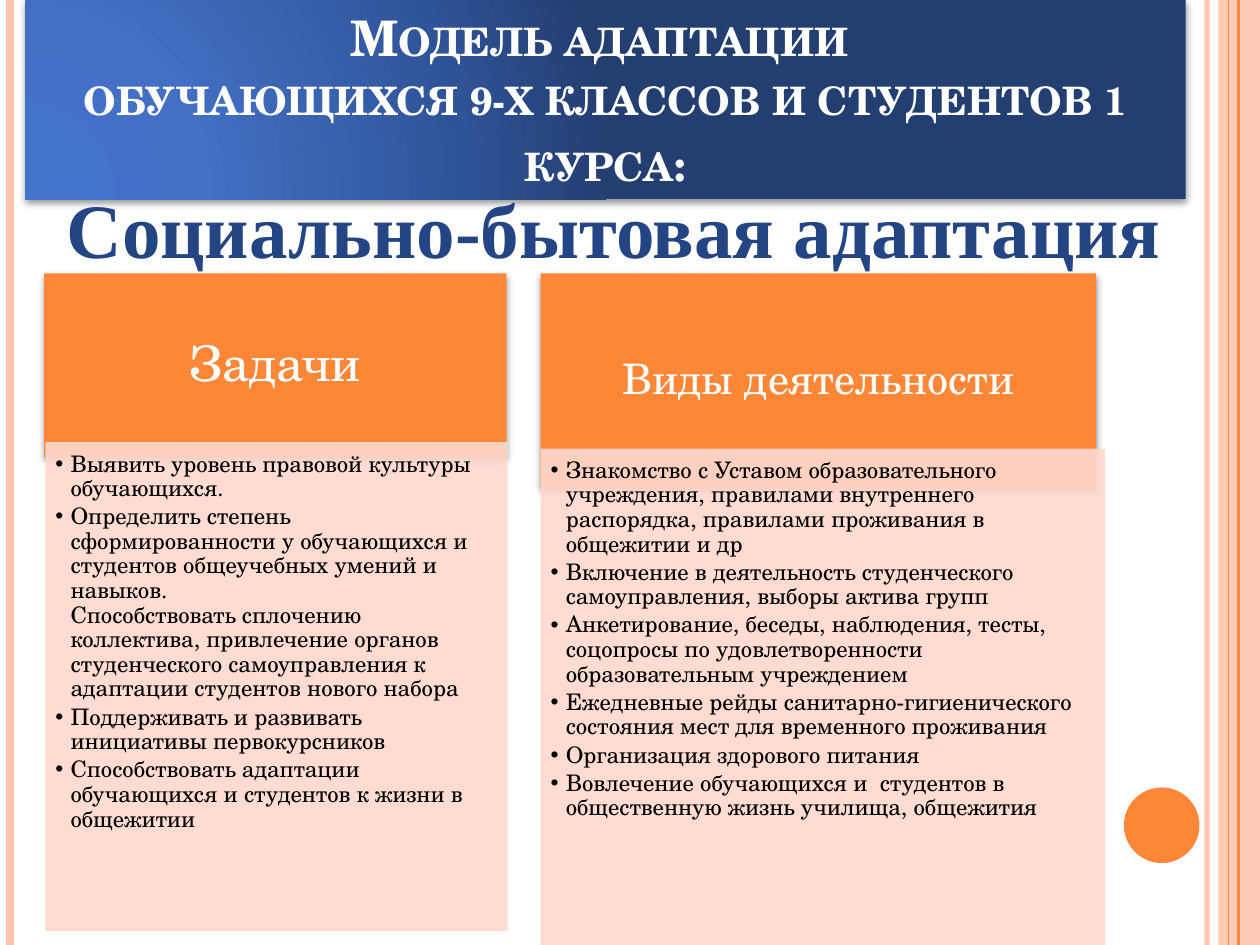
"""Builds the slide on the social adaptation of students."""
from copy import deepcopy

from lxml import etree
from pptx import Presentation
from pptx.dml.color import RGBColor
from pptx.enum.shapes import MSO_CONNECTOR, MSO_SHAPE
from pptx.enum.text import MSO_ANCHOR, MSO_AUTO_SIZE, PP_ALIGN
from pptx.oxml import parse_xml
from pptx.oxml.ns import nsdecls, qn
from pptx.util import Inches, Pt

STRAIGHT = MSO_CONNECTOR.STRAIGHT
RECTANGLE, OVAL = MSO_SHAPE.RECTANGLE, MSO_SHAPE.OVAL
TOP, MIDDLE, BOTTOM = MSO_ANCHOR.TOP, MSO_ANCHOR.MIDDLE, MSO_ANCHOR.BOTTOM
CENTER, LEFT = PP_ALIGN.CENTER, PP_ALIGN.LEFT
NO_AUTOFIT = MSO_AUTO_SIZE.NONE
COMPARISON_LAYOUT = 4
SCHOOL_FONT = "TeX Gyre Schola"
COLORS = {
    "orange": "FE8637", "peach": "FEC3AE", "panel": "FFD9CE",
    "white": "FFFFFF", "black": "000000", "navy": "244583",
}
BANNER_STOPS = [(0, "4574CC"), (30, "4370C5"), (75, "2F5397"), (100, "233E70")]
STRIPES = [
    (9.58, "peach", 3, 93), (0.08, "peach", 4.5, 100),
    (9.83, "orange", 1.5, 100), (9.75, "orange", 0.75, 100),
]
TASKS = [
    "Выявить уровень правовой культуры обучающихся.",
    "Определить степень сформированности у обучающихся и студентов общеучебных "
    "умений и навыков.\nСпособствовать сплочению коллектива, привлечение органов "
    "студенческого самоуправления к адаптации студентов нового набора",
    "Поддерживать и развивать инициативы первокурсников",
    "Способствовать адаптации обучающихся и студентов к жизни в общежитии",
]
ACTIVITIES = [
    "Знакомство с Уставом образовательного учреждения, правилами внутреннего "
    "распорядка, правилами проживания в общежитии и др",
    "Включение в деятельность студенческого самоуправления, выборы актива групп",
    "Анкетирование, беседы, наблюдения, тесты, соцопросы по удовлетворенности "
    "образовательным учреждением",
    "Ежедневные рейды санитарно-гигиенического состояния мест для временного "
    "проживания",
    "Организация здорового питания",
    "Вовлечение обучающихся и  студентов в общественную жизнь училища, общежития",
]


def place(shape, left, top, width, height):
    """Move and size a shape, in inches."""
    shape.left, shape.top = Inches(left), Inches(top)
    shape.width, shape.height = Inches(width), Inches(height)


def paint(fill_format, element, color, opacity=100):
    """Fill with a solid colour, see-through when opacity is below 100."""
    fill_format.solid()
    fill_format.fore_color.rgb = RGBColor.from_string(COLORS[color])
    if opacity < 100:
        tone = next(element.iter(qn("a:srgbClr")))
        etree.SubElement(tone, qn("a:alpha")).set("val", str(opacity * 1000))


def add_shadow(shape):
    """Give a shape a soft shadow that falls downwards."""
    shape._element.spPr.append(parse_xml(
        f'<a:effectLst {nsdecls("a")}><a:outerShdw blurRad="{Pt(4)}" '
        f'dist="{Pt(1.6)}" dir="5400000" rotWithShape="0"><a:srgbClr val="000000">'
        '<a:alpha val="42000"/></a:srgbClr></a:outerShdw></a:effectLst>'))


def add_banner_gradient(shape):
    """Fill a shape with the radial blue gradient."""
    stops = "".join(
        f'<a:gs pos="{position * 1000}"><a:srgbClr val="{color}"/></a:gs>'
        for position, color in BANNER_STOPS)
    shape._element.spPr.append(parse_xml(
        f'<a:gradFill {nsdecls("a")} rotWithShape="1"><a:gsLst>{stops}</a:gsLst>'
        '<a:path path="circle"><a:fillToRect l="5000" t="100000" r="120000" '
        'b="10000"/></a:path></a:gradFill>'))


def add_text(para, text, size, color, font=SCHOOL_FONT, bold=False, small_caps=False):
    """Append formatted text to a paragraph; a newline is a line break."""
    for number, piece in enumerate(text.split("\n")):
        if number:
            para.add_line_break()
            para._p[-1].append(deepcopy(span._r.rPr))
        span = para.add_run()
        span.text = piece
        span.font.name, span.font.size, span.font.bold = font, Pt(size), bold
        span.font.color.rgb = RGBColor.from_string(COLORS[color])
        if small_caps:
            span._r.rPr.set("cap", "small")


def set_frame(shape, anchor, insets=(0.1, 0.05, 0.1, 0.05)):
    """Set anchor and insets of a text frame and return the frame."""
    frame = shape.text_frame
    frame.auto_size, frame.word_wrap = NO_AUTOFIT, True
    frame.vertical_anchor = anchor
    (frame.margin_left, frame.margin_top,
     frame.margin_right, frame.margin_bottom) = map(Inches, insets)
    return frame


def space(para, align, after=0):
    """Set alignment and tight spacing of a paragraph."""
    para.alignment, para.line_spacing = align, 0.9
    para.space_before, para.space_after = Pt(0), Pt(after)


def fill_title(title):
    """Build the title banner."""
    place(title, 0.2, 0, 9.21, 1.58)
    add_banner_gradient(title)
    add_shadow(title)
    para = set_frame(title, BOTTOM).paragraphs[0]
    para.alignment = CENTER
    style = {"color": "white", "bold": True, "small_caps": True}
    add_text(para, "Модель адаптации \nобучающихся 9-х классов и студентов 1 курса",
             size=28, **style)
    add_text(para, ":", size=32, **style)


def fill_header(header, text, size, bounds, insets):
    """Build the orange heading of a column."""
    place(header, *bounds)
    paint(header.fill, header._element.spPr, "orange")
    add_shadow(header)
    para = set_frame(header, MIDDLE, insets).paragraphs[0]
    space(para, CENTER)
    add_text(para, text, size=size, color="white")


def fill_list(panel, items, bounds):
    """Build the bulleted panel of a column."""
    place(panel, *bounds)
    paint(panel.fill, panel._element.spPr, "panel", 90)
    frame = set_frame(panel, TOP, (0.08, 0.08, 0.1, 0.11))
    for number, item in enumerate(items):
        para = frame.add_paragraph() if number else frame.paragraphs[0]
        space(para, LEFT, after=2)
        properties = para._p.get_or_add_pPr()
        properties.set("marL", str(Inches(0.12)))
        properties.set("indent", str(Inches(-0.12)))
        add_text(para, item, size=13, color="black")


def add_stripe(page, x, color, width, opacity):
    """Draw a vertical line over the full page height."""
    stripe = page.shapes.add_connector(
        STRAIGHT, Inches(x), Inches(0), Inches(x), Inches(7.5))
    stripe.line.width = Pt(width)
    properties = stripe._element.spPr
    paint(stripe.line.fill, properties, color, opacity)
    etree.SubElement(properties, qn("a:effectLst"))


def add_ornament(page, kind, bounds, color, opacity=100):
    """Draw a plain shape without outline."""
    ornament = page.shapes.add_shape(kind, *map(Inches, bounds))
    ornament.shadow.inherit = False
    ornament.line.fill.background()
    paint(ornament.fill, ornament._element.spPr, color, opacity)


def add_subtitle(page):
    """Add the topic line under the banner."""
    box = page.shapes.add_textbox(*map(Inches, (0.43, 1.39, 8.97, 0.84)))
    box.text_frame.word_wrap = False
    add_text(box.text_frame.paragraphs[0], "Социально-бытовая адаптация",
             size=44, color="navy", font="Times New Roman", bold=True)


def main():
    """Build and save the deck."""
    deck = Presentation()
    deck.slide_width, deck.slide_height = Inches(10), Inches(7.5)
    page = deck.slides.add_slide(deck.slide_layouts[COMPARISON_LAYOUT])
    title, task_header, task_list, activity_header, activity_list = page.placeholders
    fill_title(title)
    fill_header(task_header, "Задачи", 28, (0.35, 2.17, 3.67, 1.46),
                (0.22, 0.12, 0.22, 0.12))
    fill_list(task_list, TASKS, (0.36, 3.51, 3.67, 3.88))
    fill_header(activity_header, "Виды деятельности", 24, (4.29, 2.17, 4.41, 1.7),
                (0.19, 0.11, 0.19, 0.11))
    fill_list(activity_list, ACTIVITIES, (4.29, 3.56, 4.48, 3.94))
    add_ornament(page, RECTANGLE, (9.67, 0, 0.33, 7.5), "peach", 87)
    for stripe in STRIPES:
        add_stripe(page, *stripe)
    add_ornament(page, OVAL, (8.92, 6.25, 0.6, 0.6), "orange")
    add_subtitle(page)
    deck.save("out.pptx")


if __name__ == "__main__":
    main()
